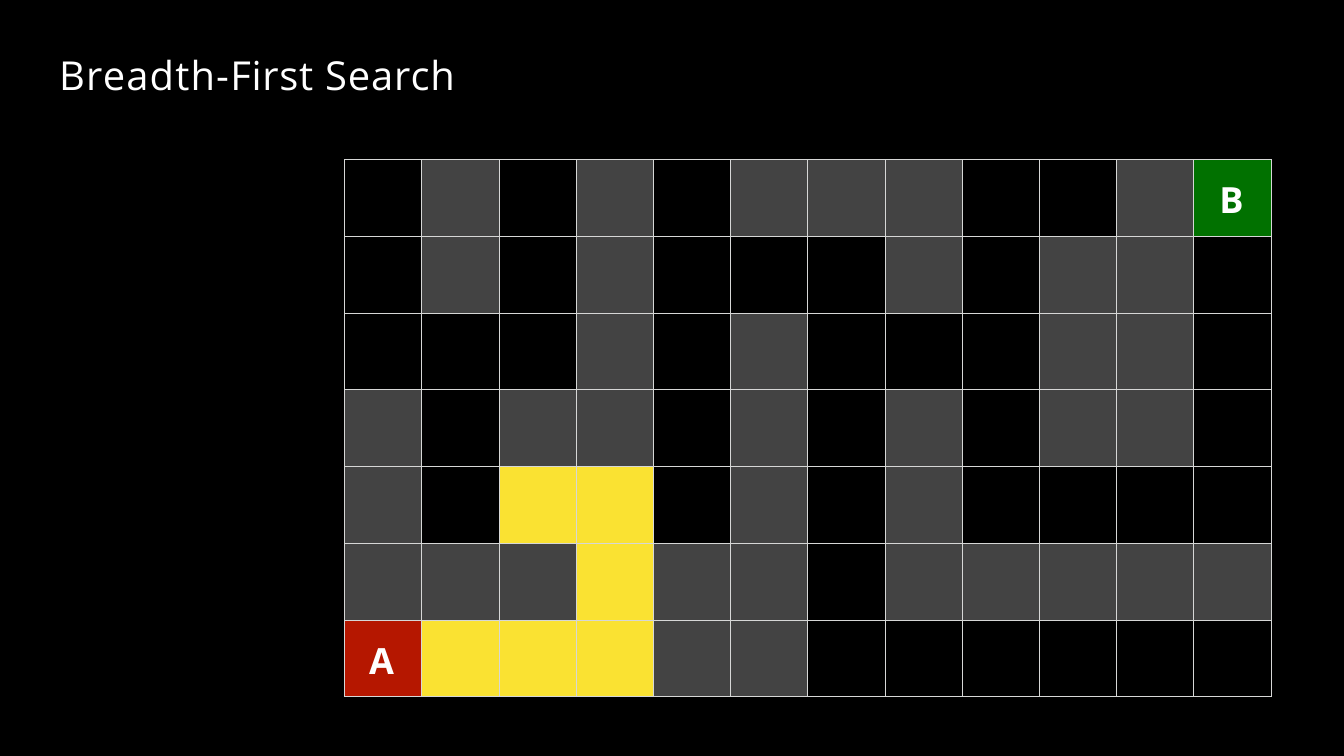
from lxml import etree
from pptx import Presentation
from pptx.dml.color import RGBColor
from pptx.enum.text import MSO_ANCHOR, PP_ALIGN
from pptx.oxml.ns import qn
from pptx.util import Pt

TOP = MSO_ANCHOR.TOP
LEFT = PP_ALIGN.LEFT
FONT = "Open Sans"
COLORS = {
    "background": "000000",
    "text": "FFFFFF",
    "border": "D6D7D6",
    "wall": "434343",
    "explored": "FAE232",
    "start": "B51700",
    "goal": "017100",
}
MAZE = [
    ".#.#.###..#B",
    ".#.#...#.##.",
    "...#.#...##.",
    "#.##.#.#.##.",
    "#.**.#.#....",
    "###*##.#####",
    "A***##......",
]
CELL_KINDS = {"#": "wall", "*": "explored", "A": "start", "B": "goal"}
LABELS = {
    "A": {"indent": 28.8, "spacing": 2},
    "B": {"indent": 30.24, "spacing": 3.5},
}
TITLE_PARTS = [("Breadth-", 1.4), ("First ", 0.8), ("Search", 1.1)]
CELL_WIDTH, CELL_HEIGHT = 90.96, 90.41


def rgb(name):
    return RGBColor.from_string(COLORS[name])


def apply_format(target, values):
    for name, value in values.items():
        setattr(target, name, value)


def add_run(paragraph, text, size, spacing, bold=False):
    run = paragraph.add_run()
    run.text = text
    apply_format(run.font, {"name": FONT, "size": Pt(size), "bold": bold})
    run.font.color.rgb = rgb("text")
    run._r.get_or_add_rPr().set("spc", str(round(spacing * 100)))


def add_title(slide):
    title = slide.shapes.add_textbox(Pt(69), Pt(59.5), Pt(911), Pt(65))
    frame = title.text_frame
    apply_format(frame, {
        "word_wrap": True, "vertical_anchor": TOP,
        "margin_left": Pt(0.72), "margin_right": 0,
        "margin_top": Pt(0.72), "margin_bottom": 0,
    })
    for text, spacing in TITLE_PARTS:
        add_run(frame.paragraphs[0], text, 47, spacing)


def add_borders(cell):
    properties = cell._tc.get_or_add_tcPr()
    for side in "LRTB":
        line = etree.SubElement(properties, qn(f"a:ln{side}"), w=str(Pt(1)))
        fill = etree.SubElement(line, qn("a:solidFill"))
        etree.SubElement(fill, qn("a:srgbClr"), val=COLORS["border"])


def format_cell(cell, symbol):
    add_borders(cell)
    if symbol in CELL_KINDS:
        cell.fill.solid()
        cell.fill.fore_color.rgb = rgb(CELL_KINDS[symbol])
    else:
        cell.fill.background()
    if symbol in LABELS:
        label = LABELS[symbol]
        apply_format(cell, {
            "margin_left": Pt(label["indent"]), "margin_right": 0,
            "margin_top": Pt(18.5), "margin_bottom": 0,
            "vertical_anchor": TOP,
        })
        paragraph = cell.text_frame.paragraphs[0]
        paragraph.alignment = LEFT
        add_run(paragraph, symbol, 42.5, label["spacing"], bold=True)


def add_maze(slide):
    row_count, column_count = len(MAZE), len(MAZE[0])
    maze = slide.shapes.add_table(
        row_count, column_count, Pt(406), Pt(188),
        Pt(CELL_WIDTH * column_count), Pt(CELL_HEIGHT * row_count),
    ).table
    apply_format(maze, {"first_row": False, "horz_banding": False})
    for column in maze.columns:
        column.width = Pt(CELL_WIDTH)
    for row, symbols in zip(maze.rows, MAZE):
        row.height = Pt(CELL_HEIGHT)
        for cell, symbol in zip(row.cells, symbols):
            format_cell(cell, symbol)


def main():
    deck = Presentation()
    apply_format(deck, {"slide_width": Pt(1583.28), "slide_height": Pt(890.64)})
    slide = deck.slides.add_slide(deck.slide_layouts[6])
    slide.background.fill.solid()
    slide.background.fill.fore_color.rgb = rgb("background")
    add_maze(slide)
    add_title(slide)
    deck.save("out.pptx")


if __name__ == "__main__":
    main()
